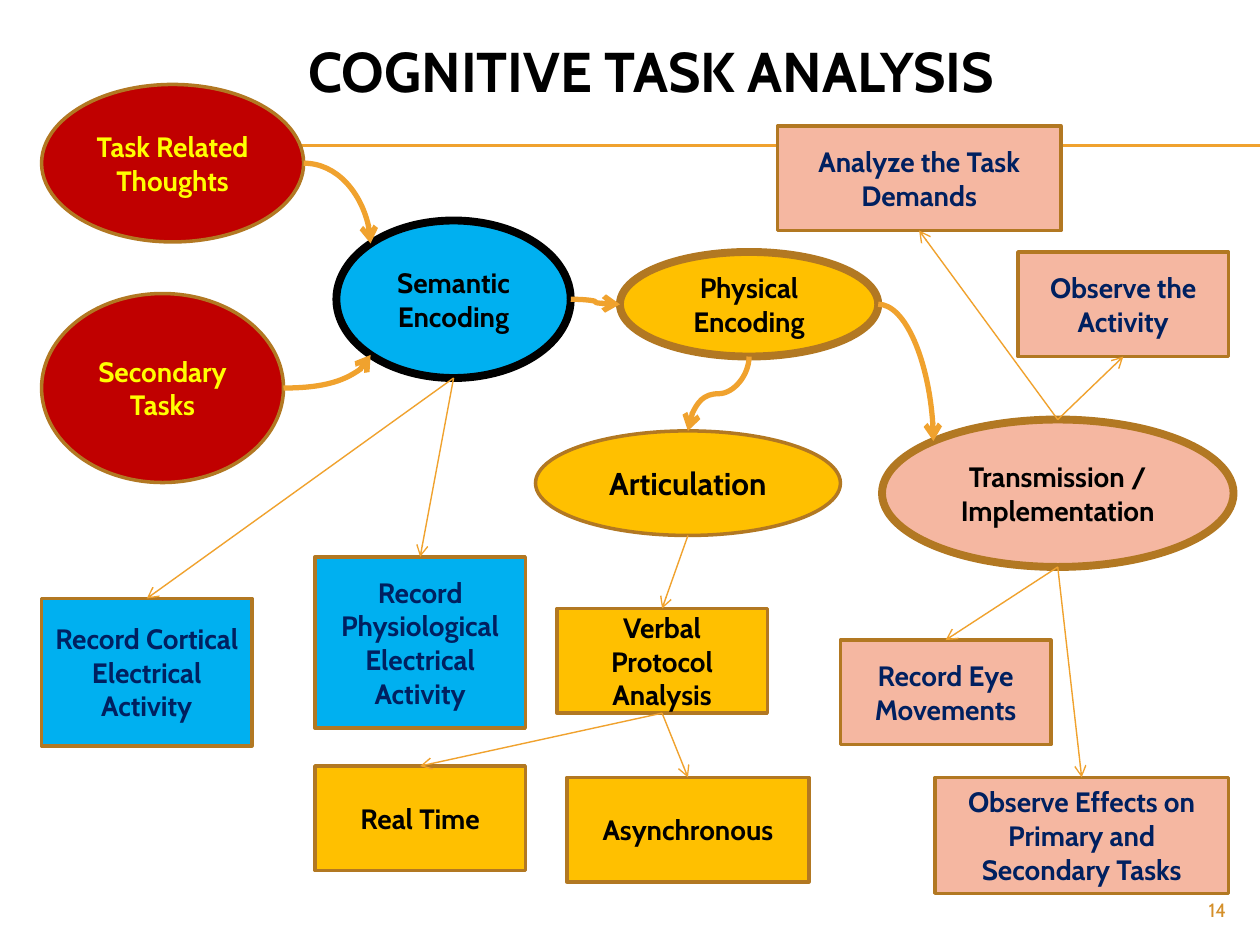
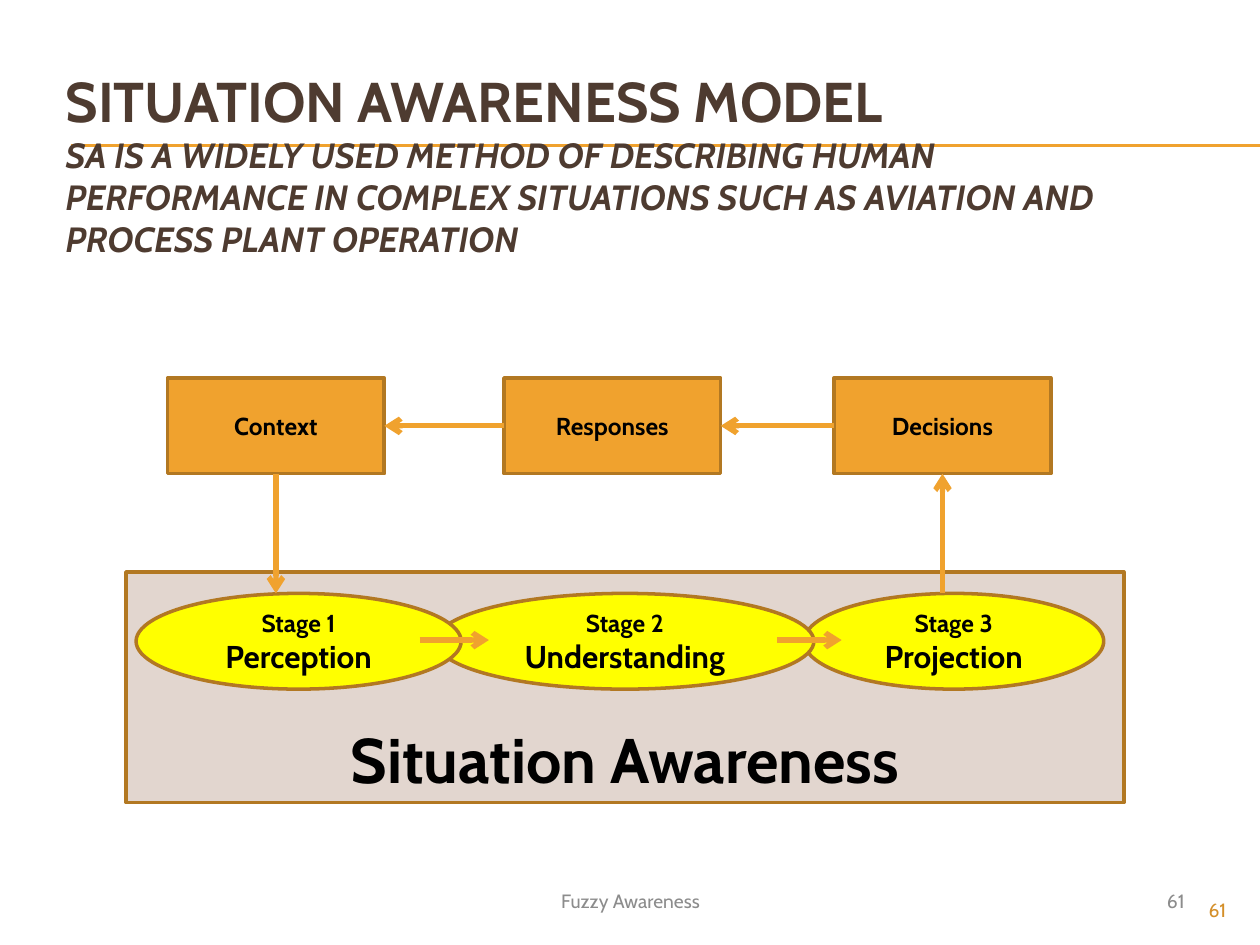
from lxml.etree import SubElement
from pptx import Presentation
from pptx.dml.color import RGBColor
from pptx.enum.shapes import MSO_CONNECTOR, MSO_SHAPE
from pptx.enum.text import MSO_ANCHOR, MSO_AUTO_SIZE, PP_ALIGN
from pptx.oxml.ns import qn
from pptx.util import Emu, Pt

FONT = "Cabin"
BLACK = "000000"
ORANGE = "F0A22E"
BROWN = "B27822"
TITLE_BROWN = "4E3B30"
PAGE_NUMBER = "D48F29"
GREY = "8C8C8C"
RED = "C00000"
YELLOW = "FFFF00"
BLUE = "00B0F0"
GOLD = "FFC000"
SALMON = "F5B7A1"
NAVY = "002060"
BEIGE = "E2D6CF"

ANCHORS = {
    "top": (0.5, 0),
    "bottom": (0.5, 1),
    "left": (0, 0.5),
    "right": (1, 0.5),
    "upper left": (0.146, 0.146),
    "lower left": (0.146, 0.854),
}


def px(length):
    return Emu(round(length * 9144))


def colour(code):
    return RGBColor.from_string(code)


def add_text(para, text, size=16, color=BLACK, bold=True, italic=False):
    span = para.add_run()
    span.text = text
    span.font.name = FONT
    span.font.size = Pt(size)
    span.font.bold = bold
    span.font.italic = italic
    span.font.color.rgb = colour(color)


def add_title(page, place, align):
    title = page.shapes.title
    title.left, title.top, title.width, title.height = map(px, place)
    frame = title.text_frame
    frame.word_wrap = True
    frame.auto_size = MSO_AUTO_SIZE.NONE
    frame.vertical_anchor = MSO_ANCHOR.MIDDLE
    para = frame.paragraphs[0]
    para.alignment = align
    return para


def add_label(page, place, text, align, color, anchor=MSO_ANCHOR.MIDDLE):
    box = page.shapes.add_textbox(*map(px, place))
    frame = box.text_frame
    frame.word_wrap = True
    frame.vertical_anchor = anchor
    para = frame.paragraphs[0]
    para.alignment = align
    add_text(para, text, size=11, color=color, bold=False)


def add_page_number(page, number):
    add_label(page, (900, 708, 83, 27), number, PP_ALIGN.RIGHT, PAGE_NUMBER, MSO_ANCHOR.TOP)


def add_node(page, kind, place, fill, lines, color=BLACK, outline=BROWN, weight=2,
             anchor=MSO_ANCHOR.MIDDLE):
    node = page.shapes.add_shape(kind, *map(px, place))
    node.shadow.inherit = False
    node.fill.solid()
    node.fill.fore_color.rgb = colour(fill)
    node.line.color.rgb = colour(outline)
    node.line.width = Pt(weight)
    frame = node.text_frame
    frame.word_wrap = True
    frame.vertical_anchor = anchor
    for index, (text, size) in enumerate(lines):
        para = frame.add_paragraph() if index else frame.paragraphs[0]
        para.alignment = PP_ALIGN.CENTER
        add_text(para, text, size=size, color=color)
    return node


def add_ellipse(page, place, fill, text, size=16, **style):
    return add_node(page, MSO_SHAPE.OVAL, place, fill, [(text, size)], **style)


def add_box(page, place, fill, text, size=16, **style):
    return add_node(page, MSO_SHAPE.RECTANGLE, place, fill, [(text, size)], **style)


def add_line(page, start, end, weight, kind=MSO_CONNECTOR.STRAIGHT, arrow=True):
    line = page.shapes.add_connector(kind, *map(Emu, start), *map(Emu, end))
    line.line.color.rgb = colour(ORANGE)
    line.line.width = Pt(weight)
    properties = line._element.spPr
    if arrow:
        SubElement(properties.find(qn("a:ln")), qn("a:tailEnd"), type="arrow")
    SubElement(properties, qn("a:effectLst"))
    return line


def anchor_point(node, side):
    across, down = ANCHORS[side]
    return round(node.left + across * node.width), round(node.top + down * node.height)


def link(page, source, source_side, target, target_side):
    add_line(page, anchor_point(source, source_side), anchor_point(target, target_side), 0.79)


def bend(page, source, source_side, target, target_side, preset="curvedConnector2"):
    line = add_line(page, anchor_point(source, source_side),
                    anchor_point(target, target_side), 3, MSO_CONNECTOR.CURVE)
    line._element.spPr.find(qn("a:prstGeom")).set("prst", preset)


def bend_down(page, source, target):
    x1, y1 = anchor_point(source, "bottom")
    x2, y2 = anchor_point(target, "top")
    middle_x, middle_y = (x1 + x2) // 2, (y1 + y2) // 2
    half_drop, half_shift = (y2 - y1) // 2, (x1 - x2) // 2
    line = add_line(page, (middle_x - half_drop, middle_y - half_shift),
                    (middle_x + half_drop, middle_y + half_shift), 3, MSO_CONNECTOR.CURVE)
    line._element.spPr.find(qn("a:xfrm")).set("rot", "5400000")


def add_title_rule(page, layout):
    for y in (115, 116):
        rule = add_line(page, (px(56), px(y)), (px(1000), px(y)), 0.75, arrow=False)
        layout.shapes._spTree.append(rule._element)


def build_task_analysis(page):
    add_text(add_title(page, (92, 17, 850, 78), PP_ALIGN.CENTER),
             "COGNITIVE TASK ANALYSIS", size=32)
    add_page_number(page, "14")

    thoughts = add_ellipse(page, (33, 67, 208, 125), RED, "Task Related Thoughts", color=YELLOW)
    secondary = add_ellipse(page, (33, 233, 192, 150), RED, "Secondary Tasks", color=YELLOW)
    semantic = add_ellipse(page, (267, 175, 186, 125), BLUE, "Semantic Encoding",
                           outline=BLACK, weight=4.5)
    physical = add_ellipse(page, (492, 200, 205, 83), GOLD, "Physical Encoding", weight=4.5)
    transmission = add_ellipse(page, (700, 333, 279, 117), SALMON,
                               "Transmission / Implementation", weight=4.5)
    articulation = add_ellipse(page, (425, 342, 242, 83), GOLD, "Articulation", size=18)

    cortical = add_box(page, (33, 475, 167, 117), BLUE,
                       "Record Cortical Electrical Activity", color=NAVY)
    physiological = add_box(page, (250, 442, 167, 136), BLUE,
                            "Record Physiological Electrical Activity", color=NAVY)
    effects = add_box(page, (742, 617, 233, 92), SALMON,
                      "Observe Effects on Primary and Secondary Tasks", color=NAVY)
    demands = add_box(page, (617, 100, 225, 83), SALMON, "Analyze the Task Demands", color=NAVY)
    activity = add_box(page, (808, 200, 167, 83), SALMON, "Observe the Activity", color=NAVY)
    eyes = add_box(page, (667, 508, 167, 83), SALMON, "Record Eye Movements", color=NAVY)
    verbal = add_box(page, (442, 483, 167, 83), GOLD, "Verbal Protocol Analysis")
    asynchronous = add_box(page, (450, 617, 192, 83), GOLD, "Asynchronous")
    real_time = add_box(page, (250, 608, 167, 83), GOLD, "Real Time")

    bend(page, secondary, "right", semantic, "lower left")
    bend(page, thoughts, "right", semantic, "upper left")
    bend(page, semantic, "right", physical, "left", "curvedConnector3")
    bend(page, physical, "right", transmission, "upper left")
    bend_down(page, physical, articulation)

    for source, target in (
        (transmission, effects), (transmission, eyes),
        (semantic, physiological), (semantic, cortical),
        (articulation, verbal), (verbal, real_time), (verbal, asynchronous),
    ):
        link(page, source, "bottom", target, "top")
    for target in (demands, activity):
        link(page, transmission, "top", target, "bottom")


def build_awareness_model(page):
    para = add_title(page, (42, 42, 900, 175), PP_ALIGN.LEFT)
    add_text(para, "SITUATION AWARENESS MODEL", size=32, color=TITLE_BROWN)
    para.add_line_break()
    add_text(para, "SA IS A WIDELY USED METHOD OF DESCRIBING HUMAN PERFORMANCE IN COMPLEX "
             "SITUATIONS SUCH AS AVIATION AND PROCESS PLANT OPERATION",
             size=20, color=TITLE_BROWN, italic=True)
    add_page_number(page, "61")

    add_box(page, (100, 454, 792, 183), BEIGE, "Situation Awareness", size=36,
            anchor=MSO_ANCHOR.BOTTOM)
    for left, text in ((133, "Context"), (400, "Responses"), (662, "Decisions")):
        add_box(page, (left, 300, 172, 76), ORANGE, text, size=14)
    for left, width, stage, text in (
        (638, 238, "Stage 3", "Projection"),
        (346, 300, "Stage 2", "Understanding"),
        (108, 258, "Stage 1", "Perception"),
    ):
        add_node(page, MSO_SHAPE.OVAL, (left, 471, width, 76), YELLOW,
                 [(stage, 14), (text, 18)])

    for x1, y1, x2, y2 in (
        (333, 508, 388, 508), (617, 508, 668, 508), (748, 471, 748, 376),
        (662, 338, 572, 338), (400, 338, 305, 338), (219, 376, 219, 471),
    ):
        add_line(page, (px(x1), px(y1)), (px(x2), px(y2)), 3)

    add_label(page, (717, 695, 233, 40), "61", PP_ALIGN.RIGHT, GREY)
    add_label(page, (342, 695, 317, 40), "Fuzzy Awareness", PP_ALIGN.CENTER, GREY)


def main():
    deck = Presentation()
    deck.slide_width, deck.slide_height = px(1000), px(750)
    layout = deck.slide_layouts[5]
    analysis, model = (deck.slides.add_slide(layout) for _ in range(2))
    add_title_rule(analysis, layout)
    build_task_analysis(analysis)
    build_awareness_model(model)
    deck.save("out.pptx")


if __name__ == "__main__":
    main()
